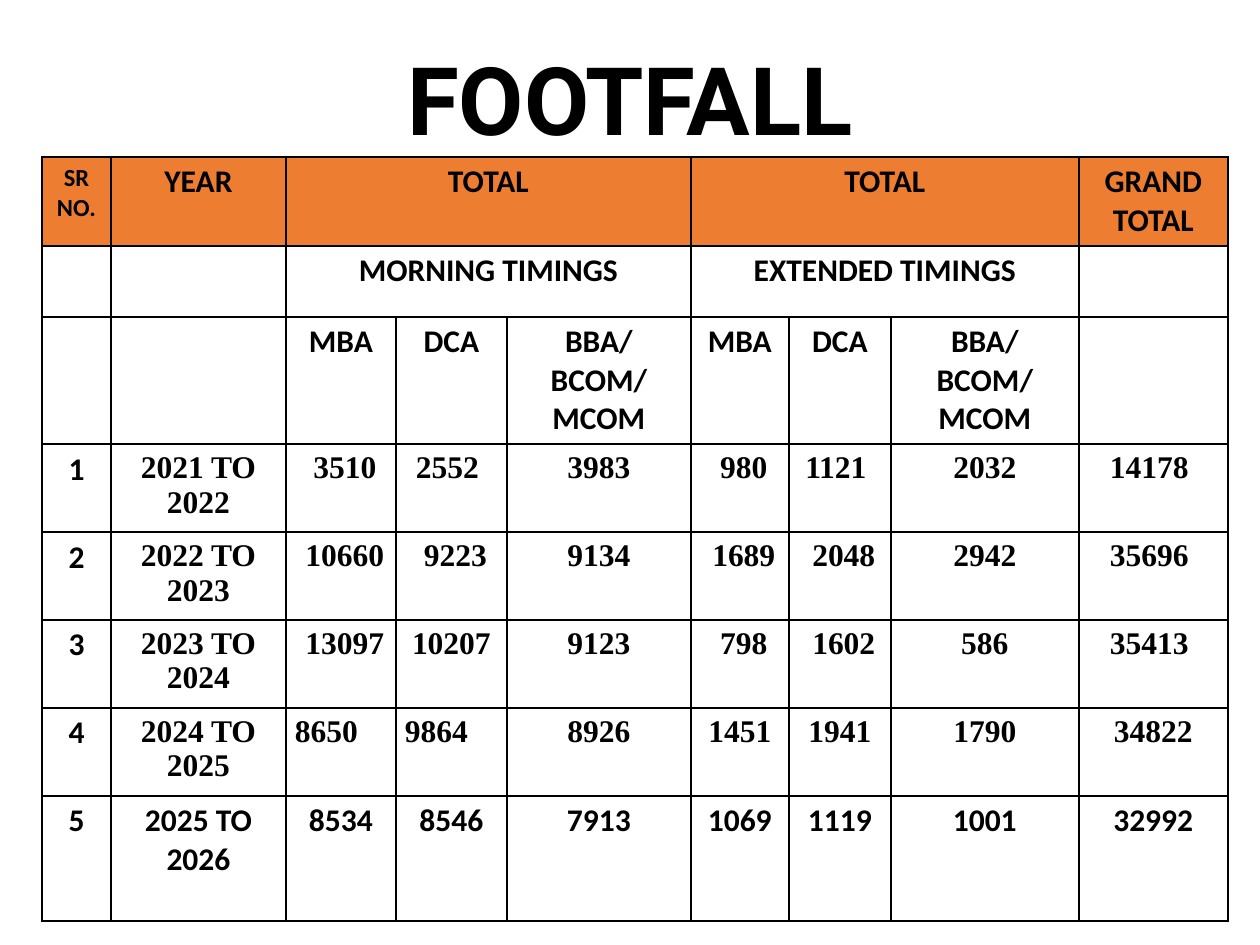
"""Build the library footfall table slide."""
from dataclasses import dataclass

from lxml import etree
from pptx import Presentation
from pptx.dml.color import RGBColor
from pptx.enum.text import MSO_ANCHOR, PP_ALIGN
from pptx.oxml.ns import qn
from pptx.table import Table, _Cell
from pptx.util import Inches, Pt

CENTER, JUSTIFY = PP_ALIGN.CENTER, PP_ALIGN.JUSTIFY
MIDDLE = MSO_ANCHOR.MIDDLE
EMU_PER_PX = Inches(1) / 126

COLUMN_WIDTHS = (69, 175, 110, 111, 184, 98, 102, 188, 149)
ROW_HEIGHTS = (88, 71, 121, 88, 88, 88, 88, 125)
FIRST_RECORD_ROW = 3
GROUP_COLUMNS = (2, 5)
COURSES = ("MBA", "DCA", "BBA/BCOM/MCOM")


@dataclass(frozen=True)
class Theme:
    ink: str = "000000"
    paper: str = "FFFFFF"
    accent: str = "ED7D31"
    title_face: str = "Roboto"
    heading_face: str = "Calibri"
    figure_face: str = "Times New Roman"
    title_size: int = 54
    cell_size: int = 18
    small_size: int = 14
    border: int = 1


THEME = Theme()


@dataclass(frozen=True)
class Heading:
    row: int
    column: int
    label: str
    span: int = 1
    size: int = THEME.cell_size


@dataclass(frozen=True)
class YearRecord:
    serial: str
    year: str
    counts: tuple[str, ...]
    face: str = THEME.figure_face
    justified: tuple[int, ...] = ()


HEADINGS = [
    Heading(0, 0, "SR NO.", size=THEME.small_size),
    Heading(0, 1, "YEAR"),
    Heading(0, 8, "GRAND TOTAL"),
    Heading(1, 2, "MORNING TIMINGS", span=3),
    Heading(1, 5, "EXTENDED TIMINGS", span=3),
    *(Heading(0, start, "TOTAL", span=3) for start in GROUP_COLUMNS),
    *(Heading(2, start + offset, course)
      for start in GROUP_COLUMNS for offset, course in enumerate(COURSES)),
]

RECORDS = [
    YearRecord("1", "2021 TO 2022",
               (" 3510", "2552 ", "3983", " 980", "1121 ", "2032", "14178 ")),
    YearRecord("2", "2022 TO 2023",
               (" 10660", " 9223", "9134", " 1689", " 2048", "2942", "35696 ")),
    YearRecord("3", "2023 TO 2024",
               (" 13097", "10207", "9123", " 798", " 1602", "586", "35413 ")),
    YearRecord("4", "2024 TO 2025",
               ("8650", "9864", "8926", "1451", "1941", "1790", "34822"),
               justified=(2, 3)),
    YearRecord("5", "2025 TO 2026",
               ("8534", "8546", "7913", "1069", "1119", "1001", "32992"),
               face=THEME.heading_face),
]


def px(length: int) -> int:
    """Convert pixels to EMU."""
    return round(length * EMU_PER_PX)


def format_paragraph(paragraph, face: str, size: int, alignment=CENTER) -> None:
    paragraph.alignment = alignment
    paragraph.font.name = face
    paragraph.font.size = Pt(size)
    paragraph.font.bold = True
    paragraph.font.color.rgb = RGBColor.from_string(THEME.ink)


def style_cell(cell: _Cell, fill: str) -> None:
    cell.margin_left = cell.margin_right = px(9)
    cell.margin_top = cell.margin_bottom = px(6)
    properties = cell._tc.get_or_add_tcPr()
    for side in ("a:lnL", "a:lnR", "a:lnT", "a:lnB"):
        line = etree.SubElement(properties, qn(side), w=str(Pt(THEME.border)))
        solid = etree.SubElement(line, qn("a:solidFill"))
        etree.SubElement(solid, qn("a:srgbClr"), val=THEME.ink)
    cell.fill.solid()
    cell.fill.fore_color.rgb = RGBColor.from_string(fill)


def write_cell(cell: _Cell, text: str, face: str = THEME.heading_face,
               size: int = THEME.cell_size, alignment=CENTER) -> None:
    cell.text = text
    format_paragraph(cell.text_frame.paragraphs[0], face, size, alignment)


def write_heading(table: Table, heading: Heading) -> None:
    cell = table.cell(heading.row, heading.column)
    if heading.span > 1:
        cell.merge(table.cell(heading.row, heading.column + heading.span - 1))
    write_cell(cell, heading.label, size=heading.size)


def write_record(table: Table, row: int, record: YearRecord) -> None:
    write_cell(table.cell(row, 0), record.serial)
    for column, value in enumerate((record.year, *record.counts), start=1):
        alignment = JUSTIFY if column in record.justified else CENTER
        write_cell(table.cell(row, column), value, record.face, alignment=alignment)


def add_footfall_table(slide) -> None:
    table = slide.shapes.add_table(
        len(ROW_HEIGHTS), len(COLUMN_WIDTHS), px(42), px(157),
        px(sum(COLUMN_WIDTHS)), px(sum(ROW_HEIGHTS))).table
    table.first_row = table.horz_banding = False
    for column, width in zip(table.columns, COLUMN_WIDTHS):
        column.width = px(width)
    for index, (row, height) in enumerate(zip(table.rows, ROW_HEIGHTS)):
        row.height = px(height)
        for cell in row.cells:
            style_cell(cell, THEME.paper if index else THEME.accent)
    for heading in HEADINGS:
        write_heading(table, heading)
    for row, record in enumerate(RECORDS, start=FIRST_RECORD_ROW):
        write_record(table, row, record)


def add_title(slide, text: str) -> None:
    title = slide.shapes.title
    title.left, title.top, title.width, title.height = map(px, (63, 38, 1134, 120))
    title.text_frame.text = text
    title.text_frame.vertical_anchor = MIDDLE
    format_paragraph(title.text_frame.paragraphs[0], THEME.title_face, THEME.title_size)


def main() -> None:
    presentation = Presentation()
    presentation.slide_width, presentation.slide_height = px(1260), px(945)
    slide = presentation.slides.add_slide(presentation.slide_layouts[5])
    add_footfall_table(slide)
    add_title(slide, "FOOTFALL")
    presentation.save("out.pptx")


if __name__ == "__main__":
    main()
